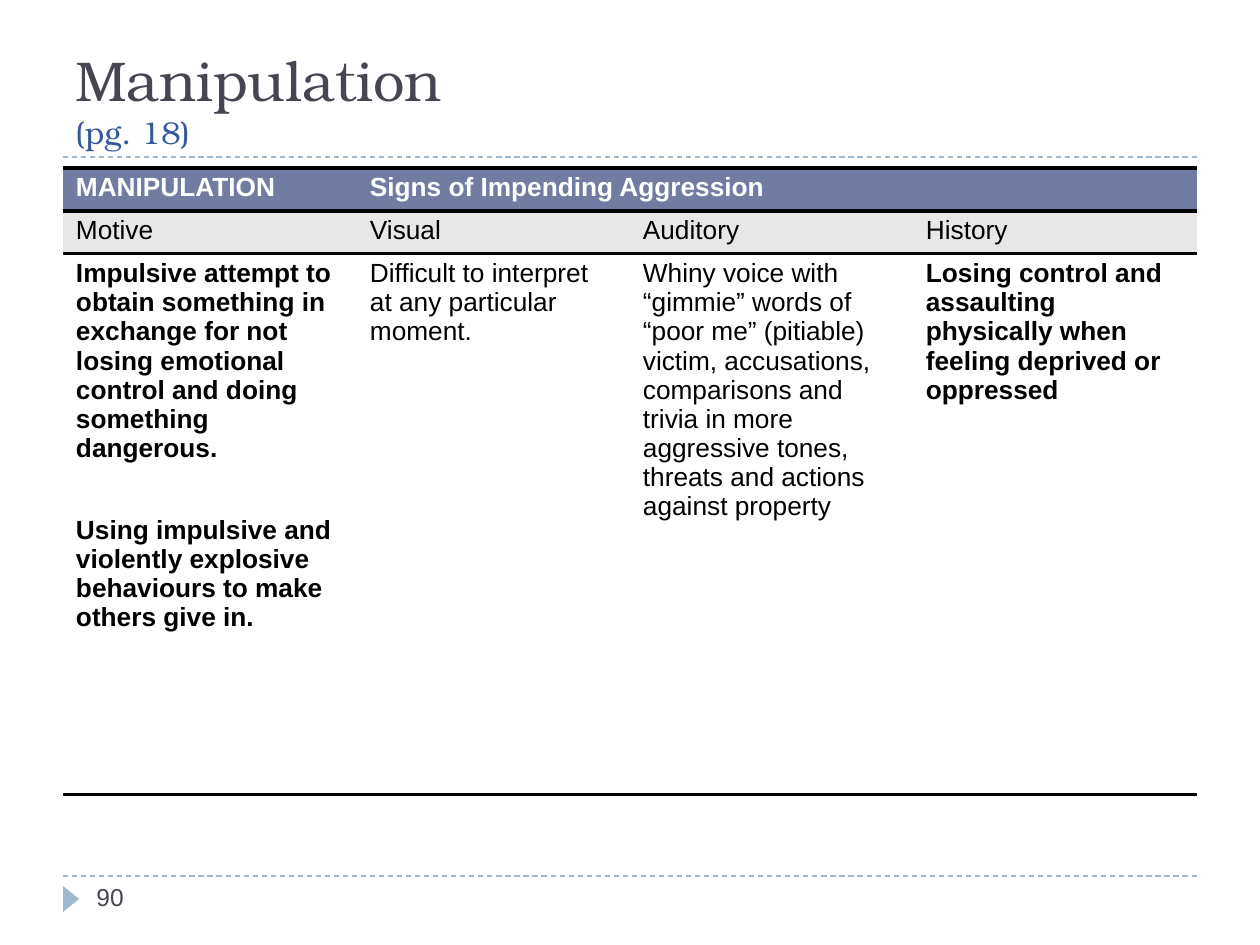
from lxml.etree import SubElement
from pptx import Presentation
from pptx.dml.color import RGBColor
from pptx.enum.dml import MSO_LINE
from pptx.enum.shapes import MSO_CONNECTOR, MSO_SHAPE
from pptx.enum.text import MSO_ANCHOR
from pptx.oxml import parse_xml
from pptx.oxml.ns import nsdecls, qn
from pptx.util import Emu, Pt

BLACK, WHITE, SLATE, INDIGO = "000000", "FFFFFF", "464653", "727CA3"
PALE_BLUE, LINK_BLUE, GREY = "9FB8CD", "335999", "E7E7E7"
SERIF, SANS = "TeX Gyre Bonum", "Arial"
NO_STYLE = "{2D5ABB26-0587-4C30-8999-92F81FD0307C}"
COLUMNS = [294, 273, 283, 284]
ROWS = [43, 43, 541]
HEADER = ["MANIPULATION", "Signs of Impending Aggression"]
SUBHEADS = ["Motive", "Visual", "Auditory", "History"]
DETAILS = [
    ["Impulsive attempt to obtain something in exchange for not losing "
     "emotional control and doing something dangerous.",
     "Using impulsive and violently explosive behaviours to make others give in."],
    ["Difficult to interpret at any particular moment."],
    ["Whiny voice with “gimmie” words of “poor me” (pitiable) victim, "
     "accusations, comparisons and trivia in more aggressive tones,",
     "threats and actions against property"],
    ["Losing control and assaulting physically when feeling deprived or oppressed"],
]


def px(n):
    """Turn pixels into EMU."""
    return Emu(round(n * 914400 / 126))


def rgb(color):
    """Turn a hex string into a colour."""
    return RGBColor.from_string(color)


def set_font(font, name, size, color, bold=False):
    """Set the look of a font."""
    font.name, font.size, font.bold = name, Pt(size), bold
    font.color.rgb = rgb(color)


def add_rule(slide, y):
    """Draw a dashed rule across the slide."""
    line = slide.shapes.add_connector(
        MSO_CONNECTOR.STRAIGHT, px(63), px(y), px(1197), px(y))
    line.line.color.rgb = rgb(PALE_BLUE)
    line.line.width = Pt(0.75)
    line.line.dash_style = MSO_LINE.DASH
    SubElement(line._element.spPr, qn("a:effectLst"))


def add_marker(slide):
    """Draw the triangle beside the page number."""
    sp = slide.shapes.add_shape(
        MSO_SHAPE.ISOSCELES_TRIANGLE, px(58), px(891), px(26), px(16))
    sp.rotation = 90
    sp.shadow.inherit = False
    sp.fill.solid()
    sp.fill.fore_color.rgb = rgb(PALE_BLUE)
    sp.line.fill.background()


def add_text_box(slide, box, anchor):
    """Add a wrapping text box and return its first paragraph."""
    tf = slide.shapes.add_textbox(*map(px, box)).text_frame
    tf.word_wrap = True
    tf.vertical_anchor = anchor
    return tf.paragraphs[0]


def add_title(slide):
    """Add the title with its page reference."""
    p = add_text_box(slide, (63, 21, 1134, 136), MSO_ANCHOR.BOTTOM)
    r = p.add_run()
    r.text = "Manipulation"
    set_font(r.font, SERIF, 32, SLATE)
    p.add_line_break()
    r = p.add_run()
    r.text = "(pg. 18)"
    set_font(r.font, SERIF, 18, LINK_BLUE)


def add_page_number(slide):
    """Add the page number."""
    p = add_text_box(slide, (84, 876, 273, 50), MSO_ANCHOR.TOP)
    p.text = "90"
    set_font(p.font, SANS, 14, SLATE)


def add_border(cell, tag):
    """Put a black border on one side of a cell."""
    border = parse_xml(
        f'<a:{tag} {nsdecls("a")} w="25400"><a:solidFill>'
        f'<a:srgbClr val="{BLACK}"/></a:solidFill></a:{tag}>')
    fill = cell._tc.tcPr.find(qn("a:solidFill"))
    fill.addprevious(border)


def fill_cell(cell, paragraphs, fill, color, bold, borders=()):
    """Set the text, fill and borders of a cell."""
    cell.margin_left = cell.margin_right = px(13)
    cell.margin_top = cell.margin_bottom = px(5)
    cell.fill.solid()
    cell.fill.fore_color.rgb = rgb(fill)
    cell.text = "\n".join(paragraphs)
    for p in cell.text_frame.paragraphs:
        set_font(p.font, SANS, 15, color, bold)
    for tag in borders:
        add_border(cell, tag)


def add_signs_table(slide):
    """Add the table of signs of aggression."""
    table = slide.shapes.add_table(
        len(ROWS), len(COLUMNS), px(63), px(168),
        px(sum(COLUMNS)), px(sum(ROWS))).table
    table.first_row = table.horz_banding = False
    table._tbl.tblPr.find(qn("a:tableStyleId")).text = NO_STYLE
    for column, width in zip(table.columns, COLUMNS):
        column.width = px(width)
    for row, height in zip(table.rows, ROWS):
        row.height = px(height)
    table.cell(0, 1).merge(table.cell(0, 3))
    for i, (subhead, detail) in enumerate(zip(SUBHEADS, DETAILS)):
        fill_cell(table.cell(0, i), HEADER[i:i + 1], INDIGO, WHITE, True,
                  ("lnT", "lnB"))
        fill_cell(table.cell(1, i), [subhead], GREY, BLACK, False, ("lnT",))
        fill_cell(table.cell(2, i), detail, WHITE, BLACK, i in (0, 3), ("lnB",))
    table.cell(2, 0).text_frame.paragraphs[1].space_before = Pt(30)


def main():
    """Build the slide and save it."""
    prs = Presentation()
    prs.slide_width, prs.slide_height = px(1260), px(945)
    slide = prs.slides.add_slide(prs.slide_layouts[6])
    for y in (876, 157):
        add_rule(slide, y)
    add_marker(slide)
    add_title(slide)
    add_page_number(slide)
    add_signs_table(slide)
    prs.save("out.pptx")


if __name__ == "__main__":
    main()
